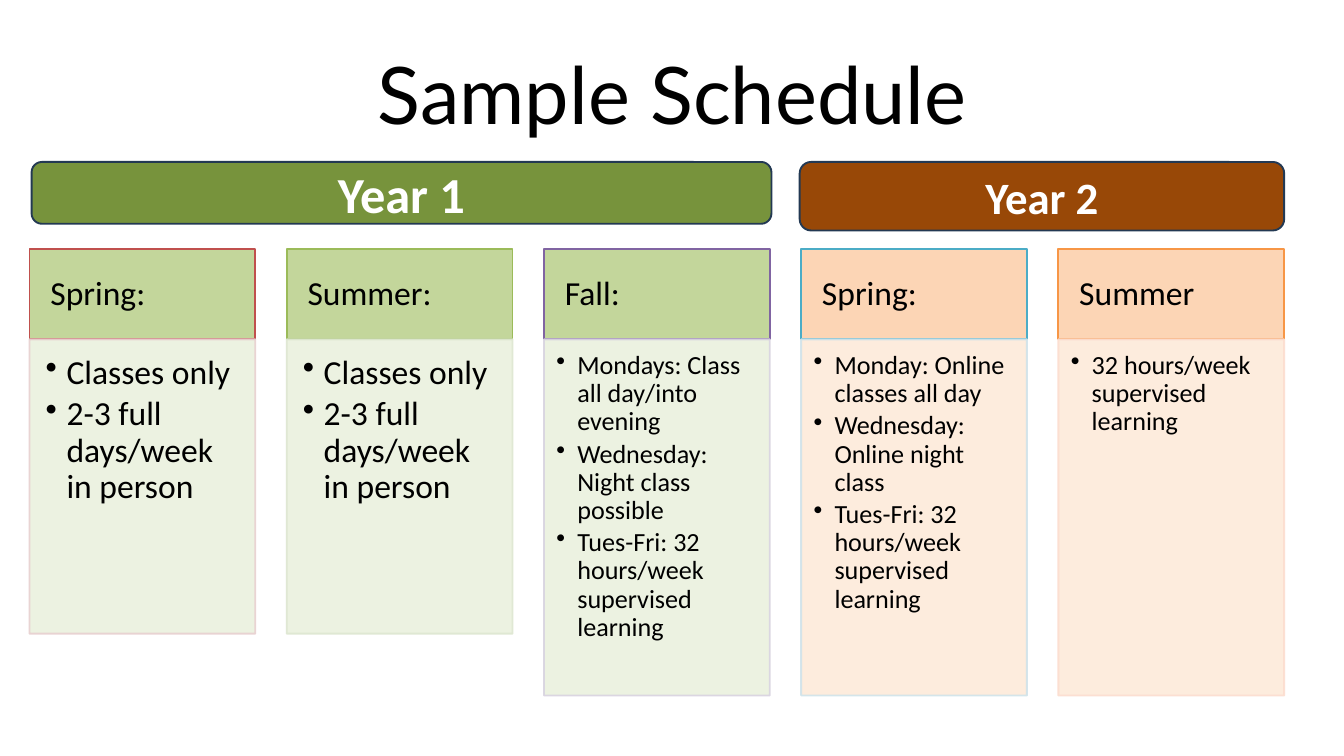
from lxml import etree
from pptx import Presentation
from pptx.dml.color import RGBColor
from pptx.enum.shapes import MSO_SHAPE
from pptx.enum.text import MSO_ANCHOR, PP_ALIGN
from pptx.oxml.ns import qn
from pptx.util import Inches, Pt

RECTANGLE, ROUNDED = MSO_SHAPE.RECTANGLE, MSO_SHAPE.ROUNDED_RECTANGLE
TOP, MIDDLE = MSO_ANCHOR.TOP, MSO_ANCHOR.MIDDLE
LEFT, CENTER = PP_ALIGN.LEFT, PP_ALIGN.CENTER

COLORS = {
    "text": "000000", "white": "FFFFFF", "banner line": "233953",
    "year 1": "77933C", "year 1 header": "C3D69B", "year 1 body": "EBF1DE",
    "year 2": "984807", "year 2 header": "FCD5B5", "year 2 body": "FDEADA",
    "red": "C0504D", "pale red": "E8D0D0",
    "green": "9BBB59", "pale green": "DEE7D1",
    "purple": "8064A2", "pale purple": "D8D3E0",
    "blue": "4BACC6", "pale blue": "D0E3EA",
    "orange": "F79646", "pale orange": "FCDDCF",
}

CLASSES = ["Classes only", "2-3 full days/week in person"]
SUPERVISED = "32 hours/week supervised learning"
# year, term, outline, body height, text size, list items
TERMS = [
    ("year 1", "Spring:", "red", 4.38, 36, CLASSES),
    ("year 1", "Summer:", "green", 4.38, 36, CLASSES),
    ("year 1", "Fall:", "purple", 5.3, 28,
     ["Mondays: Class all day/into evening", "Wednesday: Night class possible",
      f"Tues-Fri: {SUPERVISED}"]),
    ("year 2", "Spring:", "blue", 5.3, 28,
     ["Monday: Online classes all day", "Wednesday: Online night class",
      f"Tues-Fri: {SUPERVISED}"]),
    ("year 2", "Summer", "orange", 5.3, 28, [SUPERVISED]),
]
# text, colour, position, text size
BANNERS = [
    ("Year 1", "year 1", (0.47, 2.41, 11.01, 0.92), 54),
    ("Year 2", "year 2", (11.9, 2.41, 7.21, 1.02), 48),
]

FIRST_LEFT, LAST_LEFT = 0.44, 15.75
COLUMN_STEP = (LAST_LEFT - FIRST_LEFT) / (len(TERMS) - 1)
COLUMN_WIDTH = 3.36
HEADER_TOP, HEADER_HEIGHT = 3.71, 1.34
BODY_TOP = HEADER_TOP + HEADER_HEIGHT


def set_attributes(target, values):
    for name, value in values.items():
        setattr(target, name, value)


class ScheduleSlide:
    def __init__(self, slide, font="Calibri", title_font="Lato"):
        self.slide = slide
        self.font = font
        self.title_font = title_font

    def format_frame(self, frame, margins, anchor):
        sides = ("margin_left", "margin_top", "margin_right", "margin_bottom")
        values = {side: Inches(size) for side, size in zip(sides, margins)}
        set_attributes(frame, {**values, "word_wrap": True, "vertical_anchor": anchor})

    def format_font(self, paragraph, size, color="text", **values):
        set_attributes(paragraph.font, {"name": self.font, "size": Pt(size), **values})
        paragraph.font.color.rgb = RGBColor.from_string(COLORS[color])

    def title(self, text, position, size):
        shape = self.slide.shapes.title
        names = ("left", "top", "width", "height")
        set_attributes(shape, {n: Inches(v) for n, v in zip(names, position)})
        self.format_frame(shape.text_frame, (0, 0, 0, 0), TOP)
        paragraph = shape.text_frame.paragraphs[0]
        paragraph.text = text
        set_attributes(paragraph, {"alignment": CENTER, "line_spacing": Pt(119)})
        self.format_font(paragraph, size, name=self.title_font)

    def box(self, kind, position, fill, line):
        shape = self.slide.shapes.add_shape(kind, *map(Inches, position))
        shape.shadow.inherit = False
        shape.fill.solid()
        shape.fill.fore_color.rgb = RGBColor.from_string(COLORS[fill])
        shape.line.color.rgb = RGBColor.from_string(COLORS[line])
        shape.line.width = Pt(2)
        return shape

    def banner(self, text, fill, position, size):
        frame = self.box(ROUNDED, position, fill, "banner line").text_frame
        self.format_frame(frame, (0.1, 0.05, 0.1, 0.05), MIDDLE)
        paragraph = frame.paragraphs[0]
        paragraph.text = text
        paragraph.alignment = CENTER
        self.format_font(paragraph, size, "white", bold=True)

    def term_header(self, text, position, fill, line):
        frame = self.box(RECTANGLE, position, fill, line).text_frame
        self.format_frame(frame, (0.31, 0.18, 0.31, 0.18), MIDDLE)
        paragraph = frame.paragraphs[0]
        paragraph.text = text
        set_attributes(paragraph, {"alignment": LEFT, "line_spacing": 0.9})
        self.format_font(paragraph, 36)

    def term_list(self, items, position, fill, line, size):
        shape = self.box(RECTANGLE, position, fill, line)
        for color in shape._element.spPr.iter(qn("a:srgbClr")):
            etree.SubElement(color, qn("a:alpha"), val="90000")
        margin = size / 150
        self.format_frame(shape.text_frame,
                          (margin, margin, size / 115, size / 102), TOP)
        for index, item in enumerate(items):
            frame = shape.text_frame
            paragraph = frame.add_paragraph() if index else frame.paragraphs[0]
            paragraph.text = item
            self.bullet(paragraph)
            set_attributes(paragraph, {"level": 1, "alignment": LEFT, "line_spacing": 0.9,
                                       "space_after": Pt(size * 0.15)})
            self.format_font(paragraph, size)

    def bullet(self, paragraph):
        properties = paragraph._p.get_or_add_pPr()
        indent = Inches(0.31)
        properties.set("marL", str(indent))
        properties.set("indent", str(-indent))
        etree.SubElement(properties, qn("a:buChar"), char="•")


def main():
    presentation = Presentation()
    presentation.slide_width = Inches(20)
    presentation.slide_height = Inches(11.25)
    title_only = presentation.slide_layouts[5]
    schedule = ScheduleSlide(presentation.slides.add_slide(title_only))

    schedule.title("Sample Schedule", (1.69, 0.44, 16.62, 1.56), 85)
    for column, (year, term, line, height, size, items) in enumerate(TERMS):
        left = FIRST_LEFT + column * COLUMN_STEP
        schedule.term_header(term, (left, HEADER_TOP, COLUMN_WIDTH, HEADER_HEIGHT),
                             f"{year} header", line)
        schedule.term_list(items, (left, BODY_TOP, COLUMN_WIDTH, height),
                           f"{year} body", f"pale {line}", size)
    for banner in BANNERS:
        schedule.banner(*banner)

    presentation.save("out.pptx")


if __name__ == "__main__":
    main()
